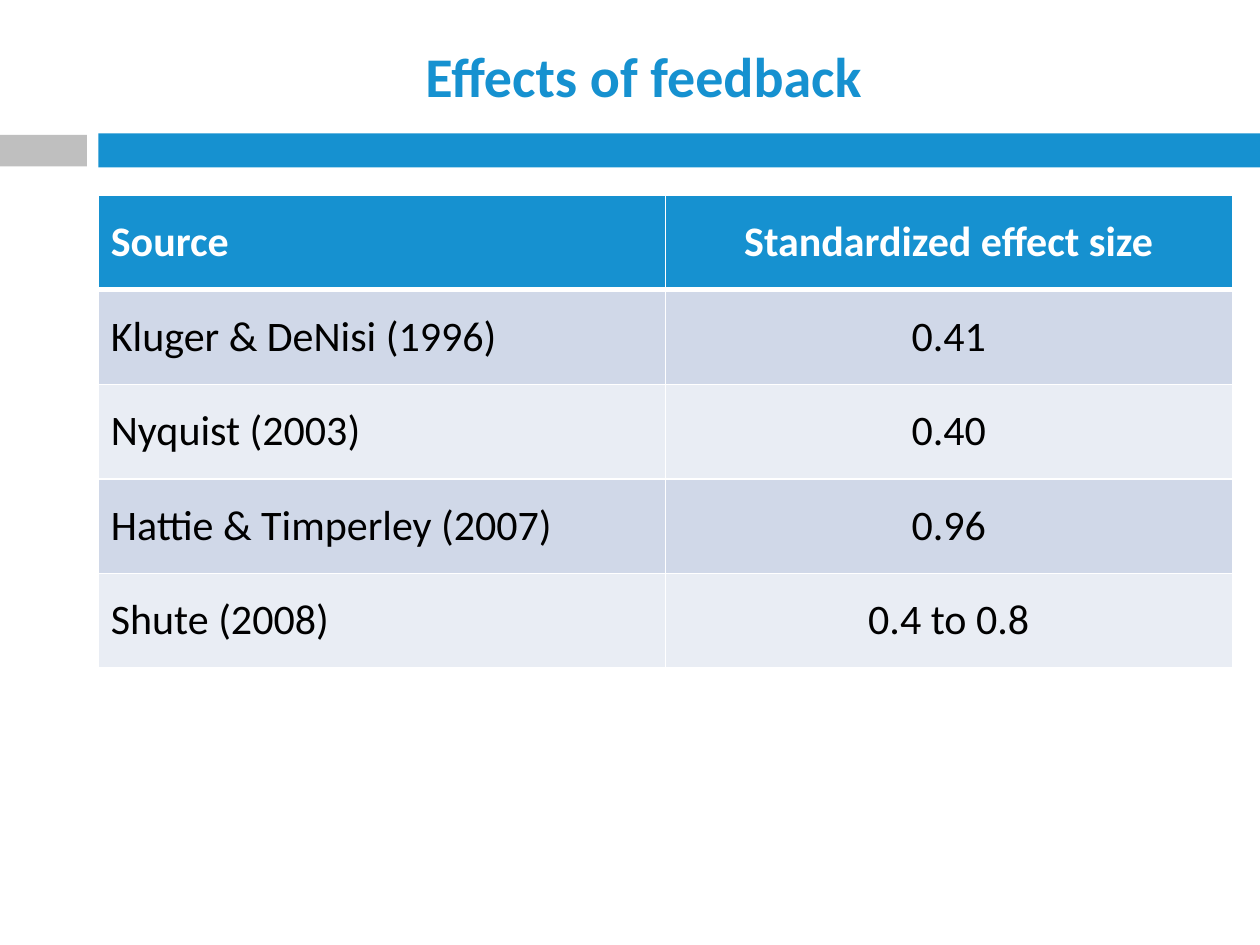
"""Build a slide with a table of feedback effect sizes."""
import pptx
import pptx.dml.color
import pptx.enum.shapes
import pptx.enum.text
import pptx.oxml
import pptx.oxml.ns
import pptx.util
from pptx.util import Inches

TITLE = "Effects of feedback"
ROWS = [
    ("Source", "Standardized effect size"),
    ("Kluger & DeNisi (1996)", "0.41"),
    ("Nyquist (2003)", "0.40"),
    ("Hattie & Timperley (2007)", "0.96"),
    ("Shute (2008)", "0.4 to 0.8"),
]
COLORS = {
    "blue": "1691D0",
    "gray": "BFBFBF",
    "band_dark": "D0D8E8",
    "band_light": "E9EDF4",
    "white": "FFFFFF",
    "black": "000000",
}
BARS = [("blue", 0.78, 1.06, 9.22, 0.27), ("gray", 0, 1.07, 0.69, 0.25)]
FONT = "Calibri"
LEFT, TABLE_TOP, COL_WIDTH, ROW_HEIGHT = 0.78, 1.55, 4.5, 0.75
ALIGN = pptx.enum.text.PP_ALIGN
MIDDLE = pptx.enum.text.MSO_ANCHOR.MIDDLE


def rgb(name):
    return pptx.dml.color.RGBColor.from_string(COLORS[name])


def write(tf, text, size, color, bold, align):
    tf.text = text
    p = tf.paragraphs[0]
    p.alignment = align
    font = p.runs[0].font
    font.name, font.size, font.bold = FONT, pptx.util.Pt(size), bold
    font.color.rgb = rgb(color)


def add_bar(slide, color, *box):
    sp = slide.shapes.add_shape(
        pptx.enum.shapes.MSO_SHAPE.RECTANGLE, *map(Inches, box))
    sp.shadow.inherit = False
    sp.fill.solid()
    sp.fill.fore_color.rgb = rgb(color)
    sp.line.fill.background()


def add_title(slide):
    sp = slide.shapes.add_textbox(
        Inches(LEFT), Inches(0.26), Inches(8.66), Inches(0.68))
    tf = sp.text_frame
    tf.word_wrap = True
    tf.vertical_anchor = MIDDLE
    write(tf, TITLE, 32, "blue", True, ALIGN.CENTER)


def set_borders(cell, **widths):
    tc_pr = cell._tc.get_or_add_tcPr()
    for side, width in widths.items():
        tc_pr.append(pptx.oxml.parse_xml(
            f'<a:ln{side} {pptx.oxml.ns.nsdecls("a")} w="{pptx.util.Pt(width)}">'
            f'<a:solidFill><a:srgbClr val="{COLORS["white"]}"/></a:solidFill>'
            f'</a:ln{side}>'))


def add_table(slide):
    n_rows, n_cols = len(ROWS), len(ROWS[0])
    table = slide.shapes.add_table(
        n_rows, n_cols, Inches(LEFT), Inches(TABLE_TOP),
        Inches(COL_WIDTH * n_cols), Inches(ROW_HEIGHT * n_rows)).table
    for i, row in enumerate(ROWS):
        header = i == 0
        fill = "blue" if header else "band_dark" if i % 2 else "band_light"
        for j, text in enumerate(row):
            cell = table.cell(i, j)
            set_borders(cell, L=1, R=1, T=3 if i == 1 else 1, B=3 if header else 1)
            cell.fill.solid()
            cell.fill.fore_color.rgb = rgb(fill)
            cell.vertical_anchor = MIDDLE
            write(cell.text_frame, text, 24, "white" if header else "black",
                  header, ALIGN.CENTER if j else ALIGN.LEFT)


def main():
    prs = pptx.Presentation()
    prs.slide_width, prs.slide_height = Inches(10), Inches(7.5)
    slide = prs.slides.add_slide(prs.slide_layouts[6])
    for bar in BARS:
        add_bar(slide, *bar)
    add_title(slide)
    add_table(slide)
    prs.save("out.pptx")


if __name__ == "__main__":
    main()
